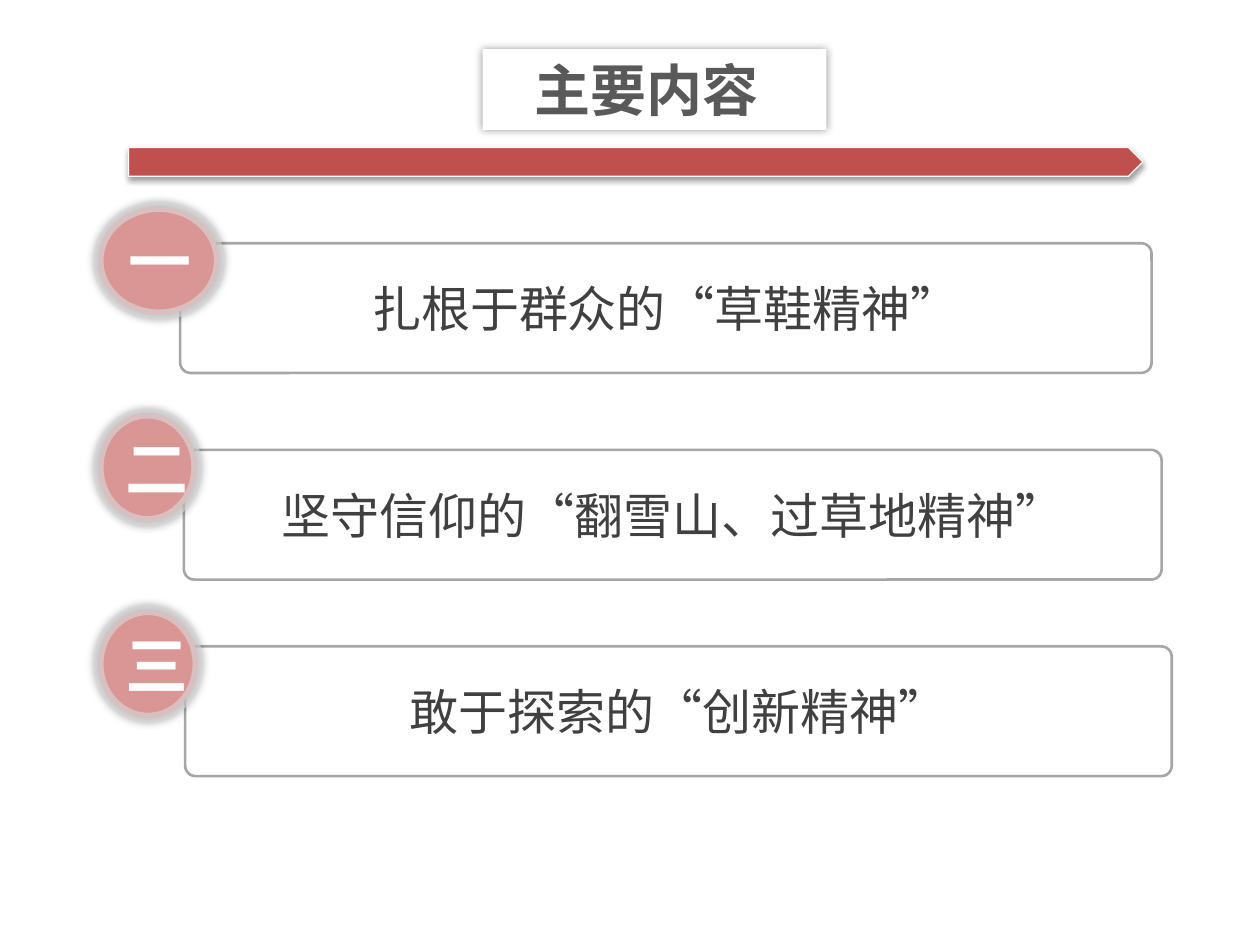
import pptx
import pptx.dml.color
import pptx.enum.shapes
import pptx.enum.text
import pptx.oxml.ns
import pptx.util
from lxml import etree

WIDTH, HEIGHT = 10, 7.5
FONT = "Noto Sans CJK SC"
SHAPES = pptx.enum.shapes.MSO_SHAPE
ALIGN = pptx.enum.text.PP_ALIGN

# Numeral, wording, top, badge width, card left, card right
ITEMS = [
    ("一", "扎根于群众的“草鞋精神”", 1.64, 0.96, 1.43, 9.14),
    ("二", "坚守信仰的“翻雪山、过草地精神”", 3.28, 0.78, 1.46, 9.22),
    ("三", "敢于探索的“创新精神”", 4.84, 0.79, 1.47, 9.30),
]
ITEM_LEFT = 0.78
ITEM_HEIGHT = 1.32
BADGE_SHARE = 0.65
CARD_SHARE = 0.78


def color(hex_value):
    return pptx.dml.color.RGBColor.from_string(hex_value)


def add_child(parent, tag, **attributes):
    child = etree.SubElement(parent, pptx.oxml.ns.qn(tag))
    for name, value in attributes.items():
        child.set(name, str(value))
    return child


def place(shape, box):
    shape.left, shape.top, shape.width, shape.height = map(pptx.util.Inches, box)


def style_shape(shape, fill=None, line=None, line_width=0):
    shape.shadow.inherit = False
    if fill:
        shape.fill.solid()
        shape.fill.fore_color.rgb = color(fill)
    else:
        shape.fill.background()
    if line:
        shape.line.color.rgb = color(line)
        shape.line.width = pptx.util.Pt(line_width)
    else:
        shape.line.fill.background()


def add_shadow(shape, opacity, blur, distance=0, angle=0):
    """Blur and distance are in points, opacity in percent, angle in degrees."""
    effects = shape._element.spPr.find(pptx.oxml.ns.qn("a:effectLst"))
    shadow = add_child(effects, "a:outerShdw", blurRad=pptx.util.Pt(blur),
                       dist=pptx.util.Pt(distance), dir=angle * 60000,
                       algn="ctr", rotWithShape=0)
    black = add_child(shadow, "a:srgbClr", val="000000")
    add_child(black, "a:alpha", val=opacity * 1000)


def set_text(shape, text, size, hex_value, bold=False, align=ALIGN.CENTER, wrap=True):
    frame = shape.text_frame
    frame.text = text
    frame.word_wrap = wrap
    frame.auto_size = pptx.enum.text.MSO_AUTO_SIZE.NONE
    frame.vertical_anchor = pptx.enum.text.MSO_ANCHOR.MIDDLE
    paragraph = frame.paragraphs[0]
    paragraph.alignment = align
    font = paragraph.runs[0].font
    font.size = pptx.util.Pt(size)
    font.bold = bold
    font.color.rgb = color(hex_value)
    font.name = FONT
    add_child(font._element, "a:ea", typeface=FONT)


def add_shape(slide, kind, box):
    return slide.shapes.add_shape(kind, *map(pptx.util.Inches, box))


def build_heading(slide, box):
    title = slide.shapes.title
    place(title, box)
    style_shape(title, "FFFFFF")
    add_shadow(title, opacity=40, blur=5)
    set_text(title, "主要内容", 32, "595959", bold=True, align=ALIGN.LEFT)
    title.text_frame.margin_left = pptx.util.Inches(0.15 * box[2])


def build_arrow_bar(slide, box):
    bar = add_shape(slide, SHAPES.PENTAGON, box)
    style_shape(bar, "C0504D", "FFFFFF", 0.75)
    add_shadow(bar, opacity=38, blur=3.1, distance=1.6, angle=90)


def build_item(slide, box, numeral, wording, badge_width, card_left):
    """Put the badge at the top left of the box and the card at its bottom right."""
    left, top, width, height = box
    card_height = height * CARD_SHARE
    card = add_shape(slide, SHAPES.ROUNDED_RECTANGLE,
                     (card_left, top + height - card_height,
                      left + width - card_left, card_height))
    card.adjustments[0] = 0.08
    style_shape(card, line="A6A6A6", line_width=1.5)
    set_text(card, wording, 28, "404040", wrap=False)

    badge = add_shape(slide, SHAPES.OVAL, (left, top, badge_width, height * BADGE_SHARE))
    style_shape(badge, "D99694", "D9D9D9", 6)
    line_color = badge.line._ln.find(".//" + pptx.oxml.ns.qn("a:srgbClr"))
    add_child(line_color, "a:alpha", val=64000)
    add_shadow(badge, opacity=40, blur=5)
    set_text(badge, numeral, 36, "FFFFFF", bold=True)


def main():
    presentation = pptx.Presentation()
    presentation.slide_width = pptx.util.Inches(WIDTH)
    presentation.slide_height = pptx.util.Inches(HEIGHT)
    slide = presentation.slides.add_slide(presentation.slide_layouts[5])
    build_heading(slide, (3.83, 0.39, 2.73, 0.64))
    build_arrow_bar(slide, (1.02, 1.17, 8.05, 0.23))
    for numeral, wording, top, badge_width, card_left, card_right in ITEMS:
        box = (ITEM_LEFT, top, card_right - ITEM_LEFT, ITEM_HEIGHT)
        build_item(slide, box, numeral, wording, badge_width, card_left)
    presentation.save("out.pptx")


if __name__ == "__main__":
    main()
